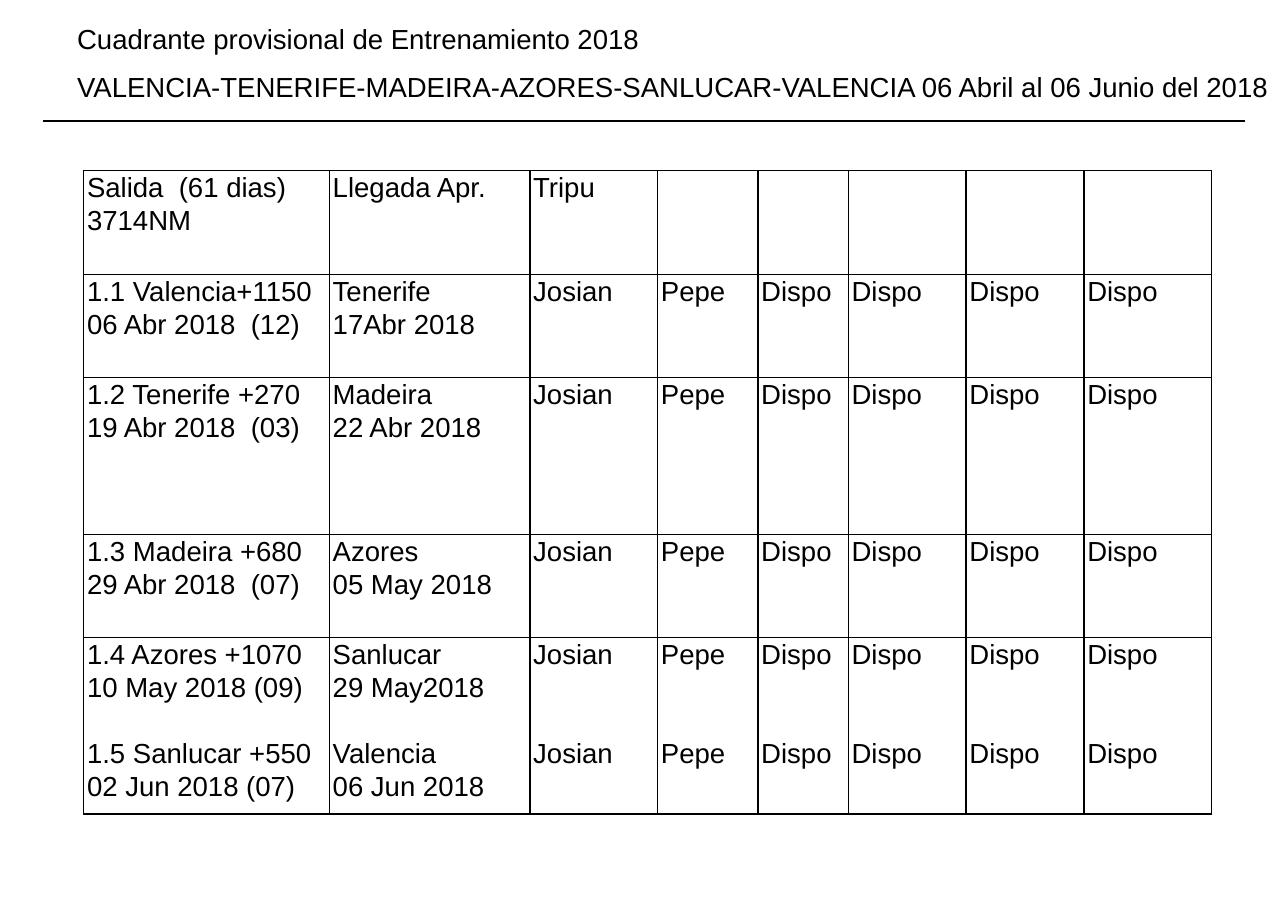
"""Builds the sailing training schedule slide."""
import pptx
import pptx.util
import pptx.enum.text
import pptx.enum.shapes
import pptx.dml.color
import pptx.oxml.ns
import lxml.etree

HUES = {"ink": "000000"}
FONT = "Arial"
SIZE = 18
LINE = 21.5

TITLE = [
    "Cuadrante provisional de Entrenamiento 2018",
    "VALENCIA-TENERIFE-MADEIRA-AZORES-SANLUCAR-VALENCIA 06 Abril al 06 Junio del 2018",
]
CREW = [["Josian"], ["Pepe"]] + [["Dispo"]] * 4
HEAD = [["Salida  (61 dias)", "3714NM"], ["Llegada Apr."], ["Tripu"]]
LEGS = [
    [["1.1 Valencia+1150 06 Abr 2018  (12)"], ["Tenerife", "17Abr 2018"]],
    [["1.2 Tenerife +270", "19 Abr 2018  (03)"], ["Madeira", "22 Abr 2018"]],
    [["1.3 Madeira +680", "29 Abr 2018  (07)"], ["Azores", "05 May 2018"]],
    [["1.4 Azores +1070", "10 May 2018 (09)"], ["Sanlucar", "29 May2018"]],
    [["1.5 Sanlucar +550", "02 Jun 2018 (07)"], ["Valencia", "06 Jun 2018"]],
]
COLS = [2.23, 1.82, 1.16, 0.91, 0.82, 1.07, 1.07, 1.16]
ROWS = [0.94, 0.94, 1.42, 0.94, 1.6]

Inches = pptx.util.Inches
Pt = pptx.util.Pt


def tint(name):
    return pptx.dml.color.RGBColor.from_string(HUES[name])


def write(frame, lines, size=SIZE, hue="ink", space=1.07, after=0, gaps=None):
    """Fill a text frame; gaps maps a line number to points above it."""
    for i, line in enumerate(lines):
        para = frame.paragraphs[0] if i == 0 else frame.add_paragraph()
        para.alignment = pptx.enum.text.PP_ALIGN.LEFT
        para.line_spacing = space
        para.space_before = Pt((gaps or {}).get(i, 0))
        para.space_after = Pt(after)
        run = para.add_run()
        run.text = line
        run.font.name, run.font.size = FONT, Pt(size)
        run.font.color.rgb = tint(hue)


def frame_cell(cell):
    """Draw thin black lines on all four sides of a cell."""
    props = cell._tc.get_or_add_tcPr()
    qn = pptx.oxml.ns.qn
    for side in ("lnL", "lnR", "lnT", "lnB"):
        edge = lxml.etree.SubElement(props, qn("a:" + side), w=str(Pt(1)))
        fill = lxml.etree.SubElement(edge, qn("a:solidFill"))
        lxml.etree.SubElement(fill, qn("a:srgbClr"), val=HUES["ink"])


def add_title(slide):
    title = slide.shapes.title
    title.left, title.top = Inches(0.6), Inches(0.13)
    title.width, title.height = Inches(11.25), Inches(0.86)
    frame = title.text_frame
    frame.auto_size = pptx.enum.text.MSO_AUTO_SIZE.NONE
    frame.word_wrap = True
    frame.vertical_anchor = pptx.enum.text.MSO_ANCHOR.TOP
    write(frame, TITLE, after=8)


def add_rule(slide):
    rule = slide.shapes.add_connector(
        pptx.enum.shapes.MSO_CONNECTOR.STRAIGHT,
        Inches(0.39), Inches(1.1), Inches(11.3), Inches(1.1))
    rule.line.color.rgb = tint("ink")
    rule.line.width = Pt(1.5)
    lxml.etree.SubElement(rule._element.spPr, pptx.oxml.ns.qn("a:effectLst"))


def add_plan(slide):
    legs = [leg + CREW for leg in LEGS]
    blank = [[]] * (len(COLS) - len(HEAD))
    groups = [[HEAD + blank]] + [[leg] for leg in legs[:3]] + [legs[3:]]
    table = slide.shapes.add_table(
        len(ROWS), len(COLS), Inches(0.76), Inches(1.55),
        Inches(sum(COLS)), Inches(sum(ROWS))).table
    table.first_row = table.horz_banding = False
    for col, width in zip(table.columns, COLS):
        col.width = Inches(width)
    for row, height, group in zip(table.rows, ROWS, groups):
        row.height = Inches(height)
        for cell, parts in zip(row.cells, zip(*group)):
            frame_cell(cell)
            cell.fill.background()
            cell.margin_left = cell.margin_right = Inches(0.03)
            cell.margin_top = cell.margin_bottom = 0
            first = len(parts[0])
            write(cell.text_frame, sum(parts, []),
                  gaps={first: LINE * (3 - first)})


def main():
    deck = pptx.Presentation()
    deck.slide_width, deck.slide_height = Inches(11.69), Inches(8.27)
    slide = deck.slides.add_slide(deck.slide_layouts[5])
    add_rule(slide)
    add_title(slide)
    add_plan(slide)
    deck.save("out.pptx")


if __name__ == "__main__":
    main()
